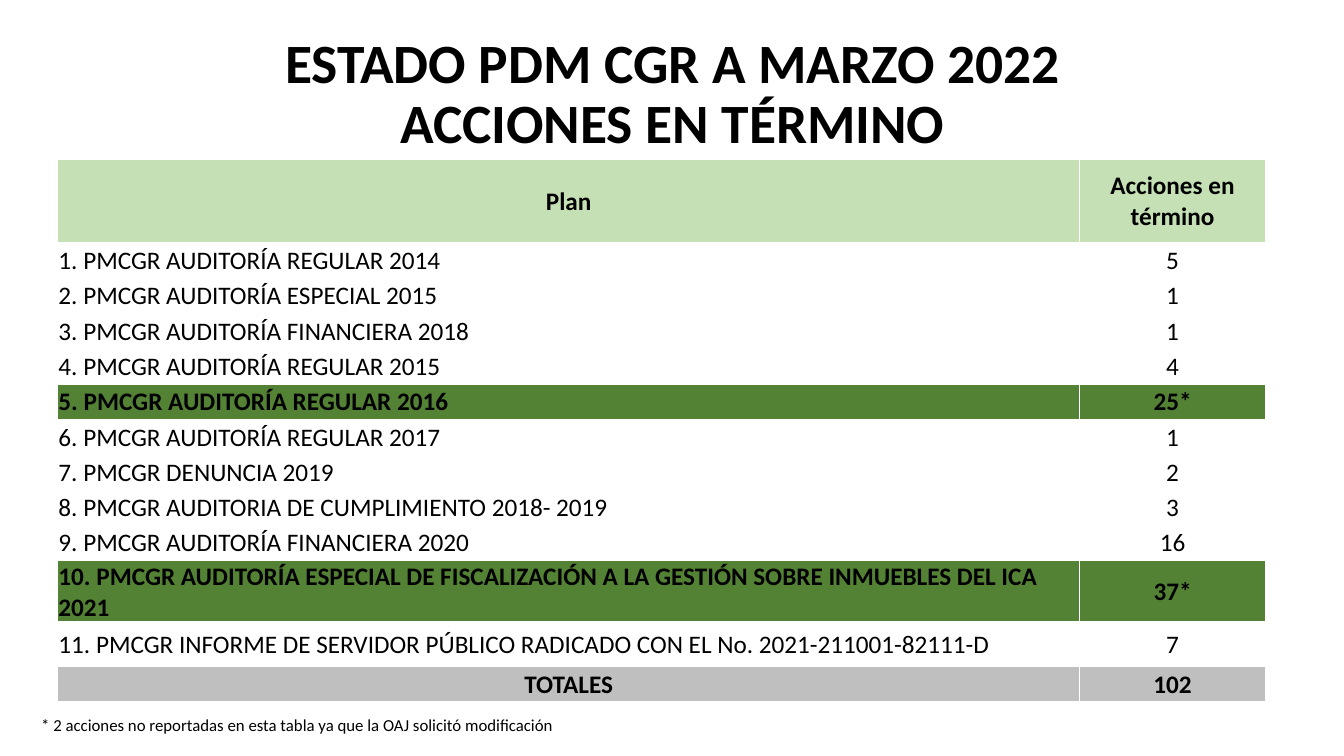
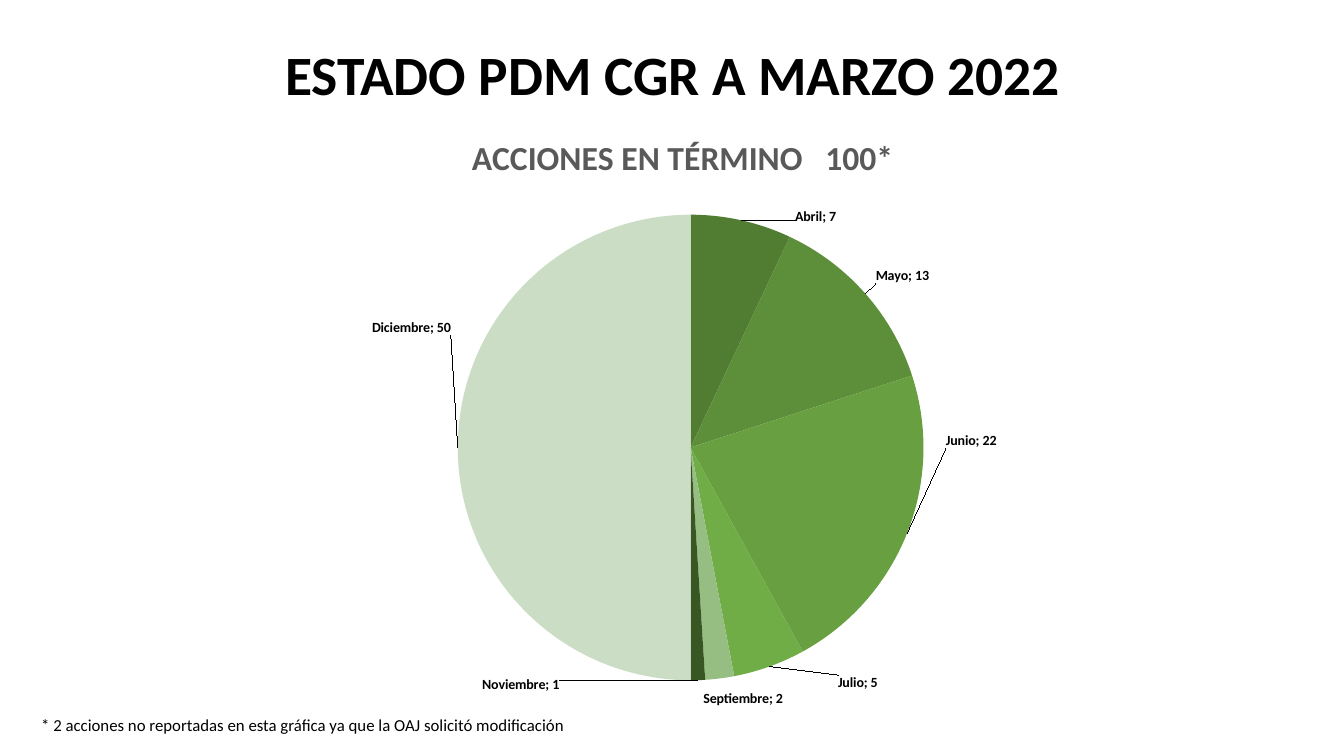
"""Build the two slides on the state of the plan's actions in term."""
from copy import deepcopy
from dataclasses import dataclass

from lxml.etree import SubElement
from pptx import Presentation
from pptx.chart.data import CategoryChartData
from pptx.dml.color import RGBColor
from pptx.enum.chart import XL_CHART_TYPE as ChartType, XL_LABEL_POSITION as LabelPosition
from pptx.enum.text import MSO_ANCHOR as Anchor, MSO_AUTO_SIZE as AutoSize, PP_ALIGN as Align
from pptx.oxml import parse_xml
from pptx.oxml.ns import nsdecls, qn
from pptx.util import Emu, Pt

EMU_PER_PX = 9144
FONT = "Calibri"
COLORS = {
    "text": "000000",
    "chart_title": "595959",
    "border": "FFFFFF",
    "header": "C5E0B4",
    "highlight": "548235",
    "total": "BFBFBF",
}
TITLE_ONLY = 5
TITLE = "ESTADO PDM CGR A MARZO 2022"


@dataclass(frozen=True)
class Box:
    """Position and size in px."""
    left: int
    top: int
    width: int
    height: int

    def emu(self) -> tuple:
        """Return the four lengths in EMU."""
        return tuple(px(n) for n in (self.left, self.top, self.width, self.height))


@dataclass(frozen=True)
class PlanRow:
    """One table row."""
    plan: str
    actions: str
    height: int = 35
    fill: str = ""
    centered: bool = False


@dataclass(frozen=True)
class Slice:
    """One pie slice with its label's shift in px."""
    month: str
    value: int
    color: str
    shift_x: int
    shift_y: int


TABLE_BOX = Box(57, 158, 1198, 517)
COLUMN_WIDTHS = (1014, 184)
ROWS = (
    PlanRow("Plan", "Acciones en término", 83, "header", True),
    PlanRow("1. PMCGR AUDITORÍA REGULAR 2014", "5"),
    PlanRow("2. PMCGR AUDITORÍA ESPECIAL 2015", "1"),
    PlanRow("3. PMCGR AUDITORÍA FINANCIERA 2018", "1"),
    PlanRow("4. PMCGR AUDITORÍA REGULAR 2015", "4"),
    PlanRow("5. PMCGR AUDITORÍA REGULAR 2016", "25*", fill="highlight"),
    PlanRow("6. PMCGR AUDITORÍA REGULAR 2017", "1"),
    PlanRow("7. PMCGR DENUNCIA 2019", "2"),
    PlanRow("8. PMCGR AUDITORIA DE CUMPLIMIENTO 2018- 2019", "3"),
    PlanRow("9. PMCGR AUDITORÍA FINANCIERA 2020", "16"),
    PlanRow("10. PMCGR AUDITORÍA ESPECIAL DE FISCALIZACIÓN A LA GESTIÓN SOBRE "
            "INMUEBLES DEL ICA 2021", "37*", 40, "highlight"),
    PlanRow("11. PMCGR INFORME DE SERVIDOR PÚBLICO RADICADO CON EL No. "
            "2021-211001-82111-D", "7", 44),
    PlanRow("TOTALES", "102", fill="total", centered=True),
)

CHART_BOX = Box(92, 113, 1150, 597)
PIE_BOX = Box(362, 100, 462, 462)
CHART_TITLE_BOX = Box(370, 15, 420, 40)
SLICES = (
    Slice("Abril", 7, "517D33", 52, 10),
    Slice("Mayo", 13, "5D8F3B", 6, -6),
    Slice("Junio", 22, "679F41", 33, -102),
    Slice("Julio", 5, "70AD47", 66, 3),
    Slice("Septiembre", 2, "96BE82", -17, 6),
    Slice("Noviembre", 1, "385723", -176, -9),
    Slice("Diciembre", 50, "CBDDC4", -1, -119),
)


def px(length: int) -> Emu:
    """Convert px to EMU."""
    return Emu(length * EMU_PER_PX)


def style_font(font, size: float, bold: bool = False, color: str = "text") -> None:
    """Set the shared font with a size, weight and colour."""
    font.name = FONT
    font.size = Pt(size)
    font.bold = bold
    font.color.rgb = RGBColor.from_string(COLORS[color])


def add_run(paragraph, text: str, size: float, bold: bool = False,
            color: str = "text") -> None:
    """Add one formatted run."""
    run = paragraph.add_run()
    run.text = text
    style_font(run.font, size, bold, color)


def add_slide(presentation, title_lines: tuple, title_height: int, footnote: str):
    """Add a slide with its title and footnote."""
    slide = presentation.slides.add_slide(presentation.slide_layouts[TITLE_ONLY])
    title = slide.shapes.title
    title.left, title.top, title.width, title.height = Box(92, 40, 1150, title_height).emu()
    frame = title.text_frame
    frame.word_wrap = True
    frame.auto_size = AutoSize.NONE
    frame.vertical_anchor = Anchor.MIDDLE
    paragraph = frame.paragraphs[0]
    paragraph.alignment = Align.CENTER
    paragraph.line_spacing = 0.9
    for index, line in enumerate(title_lines):
        if index:
            paragraph.add_line_break()
        add_run(paragraph, line, 39.6, True)

    note = slide.shapes.add_textbox(*Box(31, 704, 809, 30).emu())
    note.text_frame.word_wrap = True
    add_run(note.text_frame.paragraphs[0], footnote, 12)
    return slide


def add_borders(cell) -> None:
    """Draw the four cell borders."""
    properties = cell._tc.get_or_add_tcPr()
    for index, side in enumerate(("lnL", "lnR", "lnT", "lnB")):
        properties.insert(index, parse_xml(
            f'<a:{side} {nsdecls("a")} w="12700"><a:solidFill>'
            f'<a:srgbClr val="{COLORS["border"]}"/></a:solidFill></a:{side}>'))


def fill_cell(cell, text: str, row: PlanRow, centered: bool) -> None:
    """Write and format one table cell."""
    cell.margin_left = cell.margin_right = cell.margin_top = px(1)
    cell.margin_bottom = 0
    cell.vertical_anchor = Anchor.MIDDLE
    if row.fill:
        cell.fill.solid()
        cell.fill.fore_color.rgb = RGBColor.from_string(COLORS[row.fill])
    else:
        cell.fill.background()
    add_borders(cell)
    paragraph = cell.text_frame.paragraphs[0]
    paragraph.alignment = Align.CENTER if centered else Align.LEFT
    add_run(paragraph, text, 18, bool(row.fill))


def add_plan_table(slide) -> None:
    """Add the table of plans and actions."""
    table = slide.shapes.add_table(len(ROWS), len(COLUMN_WIDTHS), *TABLE_BOX.emu()).table
    table.first_row = table.horz_banding = False
    for column, width in zip(table.columns, COLUMN_WIDTHS):
        column.width = px(width)
    for index, row in enumerate(ROWS):
        table.rows[index].height = px(row.height)
        fill_cell(table.cell(index, 0), row.plan, row, row.centered)
        fill_cell(table.cell(index, 1), row.actions, row, True)


def set_layout(parent, index: int, **values) -> None:
    """Give a chart part a manual layout."""
    for old in parent.findall(qn("c:layout")):
        parent.remove(old)
    layout = parse_xml(f'<c:layout {nsdecls("c")}><c:manualLayout/></c:layout>')
    for tag, value in values.items():
        SubElement(layout[0], qn(f"c:{tag}"), val=str(value))
    parent.insert(index, layout)


def label_slices(series) -> None:
    """Label every slice with month and value, shifted from the pie."""
    labels = series.data_labels
    labels.show_category_name = labels.show_value = True
    labels.show_percentage = False
    labels.position = LabelPosition.OUTSIDE_END
    style_font(labels.font, 10, True)
    element = labels._element
    for tag in ("separator", "showLeaderLines"):
        for old in element.findall(qn(f"c:{tag}")):
            element.remove(old)
    SubElement(element, qn("c:separator")).text = "; "
    shared = [deepcopy(child) for child in element]
    SubElement(element, qn("c:showLeaderLines"), val="1")
    for index, piece in enumerate(SLICES):
        label = parse_xml(f'<c:dLbl {nsdecls("c")}><c:idx val="{index}"/></c:dLbl>')
        set_layout(label, 1, x=round(piece.shift_x / CHART_BOX.width, 4),
                   y=round(piece.shift_y / CHART_BOX.height, 4))
        label.extend(deepcopy(shared))
        element.insert(index, label)


def add_month_pie(slide) -> None:
    """Add the pie of actions by month."""
    data = CategoryChartData()
    data.categories = [piece.month for piece in SLICES]
    data.add_series("Series 1", [piece.value for piece in SLICES])
    chart = slide.shapes.add_chart(ChartType.PIE, *CHART_BOX.emu(), data).chart
    chart.has_legend = False
    style_font(chart.font, 10)
    chart.has_title = True
    add_run(chart.chart_title.text_frame.paragraphs[0],
            "ACCIONES EN TÉRMINO   100*", 24, True, "chart_title")
    set_layout(chart.chart_title._element, 1, xMode="edge", yMode="edge",
               x=round(CHART_TITLE_BOX.left / CHART_BOX.width, 4),
               y=round(CHART_TITLE_BOX.top / CHART_BOX.height, 4))
    set_layout(chart._chartSpace.chart.plotArea, 0,
               layoutTarget="inner", xMode="edge", yMode="edge",
               x=round(PIE_BOX.left / CHART_BOX.width, 4),
               y=round(PIE_BOX.top / CHART_BOX.height, 4),
               w=round(PIE_BOX.width / CHART_BOX.width, 4),
               h=round(PIE_BOX.height / CHART_BOX.height, 4))
    plot = chart.plots[0]
    plot.vary_by_categories = True
    series = plot.series[0]
    for index, piece in enumerate(SLICES):
        point_format = series.points[index].format
        point_format.fill.solid()
        point_format.fill.fore_color.rgb = RGBColor.from_string(piece.color)
        point_format.line.fill.background()
    label_slices(series)


def main() -> None:
    """Build and save the presentation."""
    presentation = Presentation()
    presentation.slide_width, presentation.slide_height = px(1333), px(750)
    note = "* 2 acciones no reportadas en esta {} ya que la OAJ solicitó modificación"
    add_plan_table(add_slide(presentation, (TITLE, "ACCIONES EN TÉRMINO"), 109,
                             note.format("tabla")))
    add_month_pie(add_slide(presentation, (TITLE,), 73, note.format("gráfica")))
    presentation.save("out.pptx")


if __name__ == "__main__":
    main()
